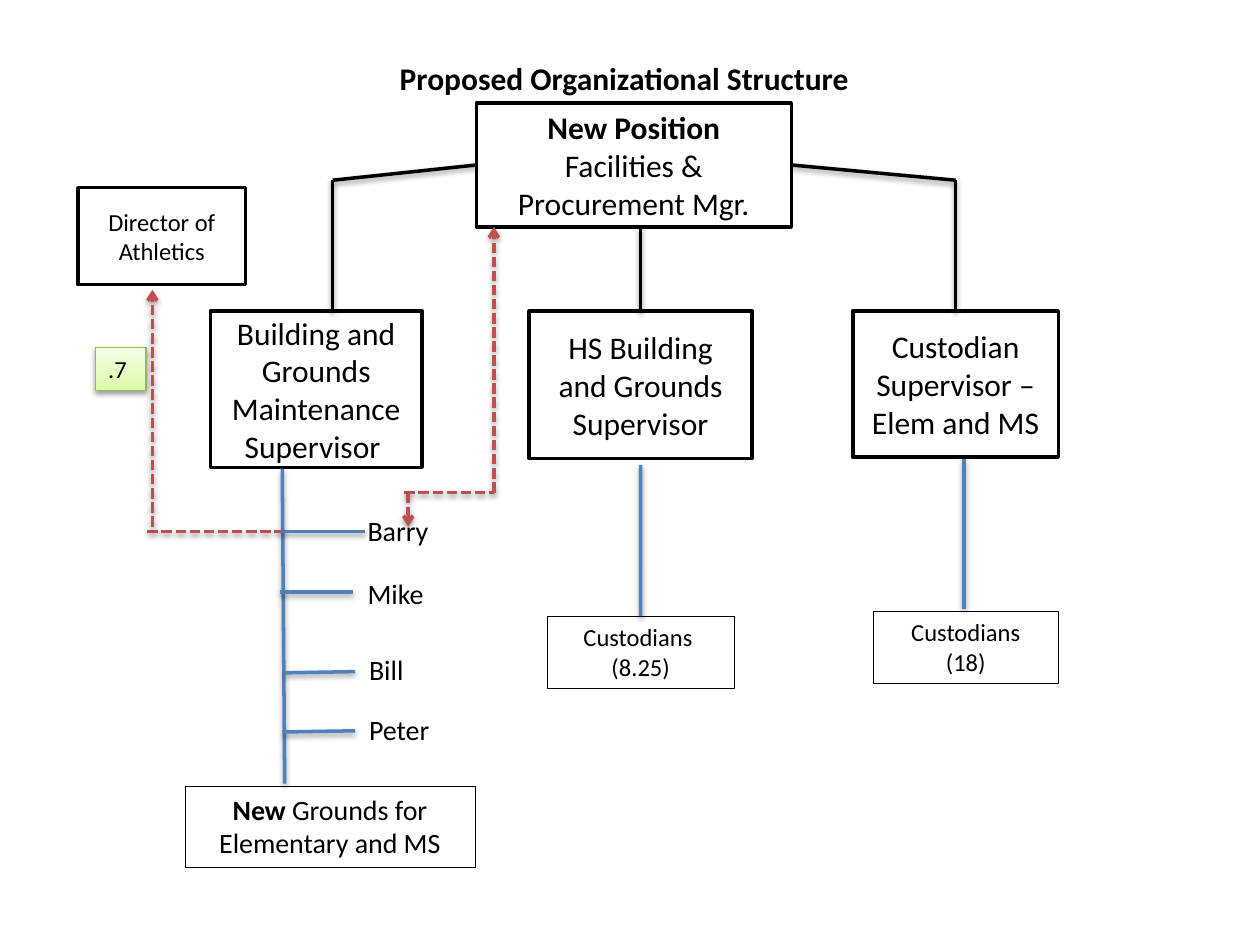
from lxml.etree import SubElement
from pptx import Presentation
from pptx.dml.color import RGBColor
from pptx.enum.dml import MSO_LINE
from pptx.enum.shapes import MSO_CONNECTOR as Conn, MSO_SHAPE as Geo
from pptx.enum.text import MSO_ANCHOR as Anchor, MSO_AUTO_SIZE as Auto, PP_ALIGN as Align
from pptx.oxml.ns import qn
from pptx.util import Pt

BLACK, WHITE, BLUE, RED = "000000", "FFFFFF", "4F81BD", "C0504D"


def color(code):
    return RGBColor.from_string(code)


def write(shape, text, size=18, lead="", bold=False,
          align=Align.CENTER, anchor=Anchor.TOP, fit=Auto.NONE):
    """Fill a shape with text; lead is a bold opening, each line a paragraph."""
    frame = shape.text_frame
    frame.word_wrap = True
    frame.auto_size = fit
    frame.vertical_anchor = anchor
    for i, line in enumerate(text.split("\n")):
        para = frame.add_paragraph() if i else frame.paragraphs[0]
        para.alignment = align
        parts = [(lead, True)] if i == 0 else []
        for part, heavy in parts + [(line, bold)]:
            if part:
                run = para.add_run()
                run.text = part
                run.font.name = "Calibri"
                run.font.size = Pt(size)
                run.font.bold = heavy
                run.font.color.rgb = color(BLACK)


class Chart:
    """The style and the current slide, with one method per element."""
    thick, thin = 2, 0.25

    def __init__(self, slide):
        self.slide = slide

    def title(self, text, *area):
        head = self.slide.shapes.title
        head.left, head.top, head.width, head.height = map(Pt, area)
        write(head, text, bold=True)

    def rect(self, area, line, width):
        box = self.slide.shapes.add_shape(Geo.RECTANGLE, *map(Pt, area))
        box.shadow.inherit = False
        box.line.color.rgb = color(line)
        box.line.width = Pt(width)
        return box

    def post(self, text, *area, **form):
        box = self.rect(area, BLACK, self.thick)
        box.fill.solid()
        box.fill.fore_color.rgb = color(WHITE)
        write(box, text, anchor=Anchor.MIDDLE, **form)
        return box

    def team(self, text, *area, **form):
        box = self.rect(area, BLACK, self.thin)
        box.fill.background()
        write(box, text, **form)
        return box

    def badge(self, text, *area):
        box = self.rect(area, "98B955", 0.75)
        box.fill.gradient()
        box.fill.gradient_angle = 90
        for stop, code in zip(box.fill.gradient_stops, ("DAFDA7", "F5FFE7")):
            stop.color.rgb = color(code)
        glow = SubElement(box._element.spPr.find(qn("a:effectLst")), qn("a:outerShdw"),
                          blurRad="40000", dist="20000", dir="5400000", rotWithShape="0")
        tone = SubElement(glow, qn("a:srgbClr"), val=BLACK)
        SubElement(tone, qn("a:alpha"), val="38000")
        write(box, text, size=14, align=Align.LEFT)

    def label(self, text, *area):
        box = self.slide.shapes.add_textbox(*map(Pt, area))
        write(box, text, size=16, align=Align.LEFT, fit=Auto.SHAPE_TO_FIT_TEXT)

    def link(self, *ends, tone=BLACK, dash=False, arrow=False, start=None, stop=None):
        """Draw a line with the theme's soft shadow; start and stop are (box, side)."""
        line = self.slide.shapes.add_connector(Conn.STRAIGHT, *map(Pt, ends))
        line.line.color.rgb = color(tone)
        line.line.width = Pt(self.thick)
        if dash:
            line.line.dash_style = MSO_LINE.SQUARE_DOT
        if arrow:
            SubElement(line.line._get_or_add_ln(), qn("a:tailEnd"), type="arrow")
        if start:
            line.begin_connect(*start)
        if stop:
            line.end_connect(*stop)


def main():
    deck = Presentation()
    deck.slide_width, deck.slide_height = Pt(720), Pt(540)
    org = Chart(deck.slides.add_slide(deck.slide_layouts[5]))
    org.title("Proposed Organizational Structure", 122.4, 30.2, 468.7, 28.8)

    # Managers and supervisors
    row = 177.8
    chief = org.post("\nFacilities & Procurement Mgr.", 272.2, 59, 180, 70.6,
                     lead="New Position")
    org.post("Building and Grounds Maintenance Supervisor ", 120.2, row, 121, 89.3)
    high = org.post("HS Building and Grounds Supervisor", 302.4, row, 127.4, 84.2)
    elem = org.post("Custodian Supervisor – Elem and MS", 487.4, row, 117.4, 83.5)
    org.post("Director of Athletics", 44.6, 107.3, 95.8, 55.4, size=14)

    # Teams
    org.team(" Grounds for Elementary and MS", 105.8, 449.3, 165.6, 46.1,
             lead="New", size=16)
    crew = org.team("Custodians \n(8.25)", 312.5, 352.1, 107.3, 41, size=14)
    org.team("Custodians\n(18)", 499, 349.2, 105.8, 41, size=14)

    # Lines from the manager to the supervisors
    org.link(272.2, 94.3, 190.1, 103, start=(chief, 1))
    org.link(190.1, 103, 190.1, row)
    org.link(366.1, 129.6, 366.1, row, stop=(high, 0))
    org.link(452.2, 94.3, 546.1, 103, start=(chief, 3))
    org.link(546.1, 103, 546.1, row, stop=(elem, 0))

    # Lines from the supervisors to their teams
    org.link(161.3, 267.8, 162.7, 447.8, tone=BLUE)
    org.link(366.1, 265.7, 366.1, 351.4, tone=BLUE, stop=(crew, 0))
    org.link(550.8, 262.1, 550.8, 347.8, tone=BLUE)

    # Grounds staff: name, label place and width, branch ends
    staff = [("Barry", 203, 290.2, 59.8, (161.3, 303.8, 208.8, 303.8)),
             ("Mike", 203, 326.2, 54, (159.8, 338.4, 201.6, 338.4)),
             ("Bill", 203.8, 369.4, 41.8, (162.7, 384.5, 203, 383.8)),
             ("Peter", 203.8, 403.9, 54, (161.3, 418.3, 203, 417.6))]
    for name, left, top, width, ends in staff:
        org.link(*ends, tone=BLUE)
        org.label(name, left, top, width, 26.6)

    # Dashed reporting routes
    for ends, arrow in [((231.1, 281.5, 282.2, 281.5), False),
                        ((233.3, 281.5, 233.3, 301), True),
                        ((282.2, 281.5, 282.2, 129.6), True),
                        ((84.2, 303.8, 161.3, 303.8), False),
                        ((87.1, 301, 87.1, 165.6), True)]:
        org.link(*ends, tone=RED, dash=True, arrow=arrow)
    org.badge(".7", 54.7, 198.7, 28.8, 24.5)

    deck.save("out.pptx")


if __name__ == "__main__":
    main()
